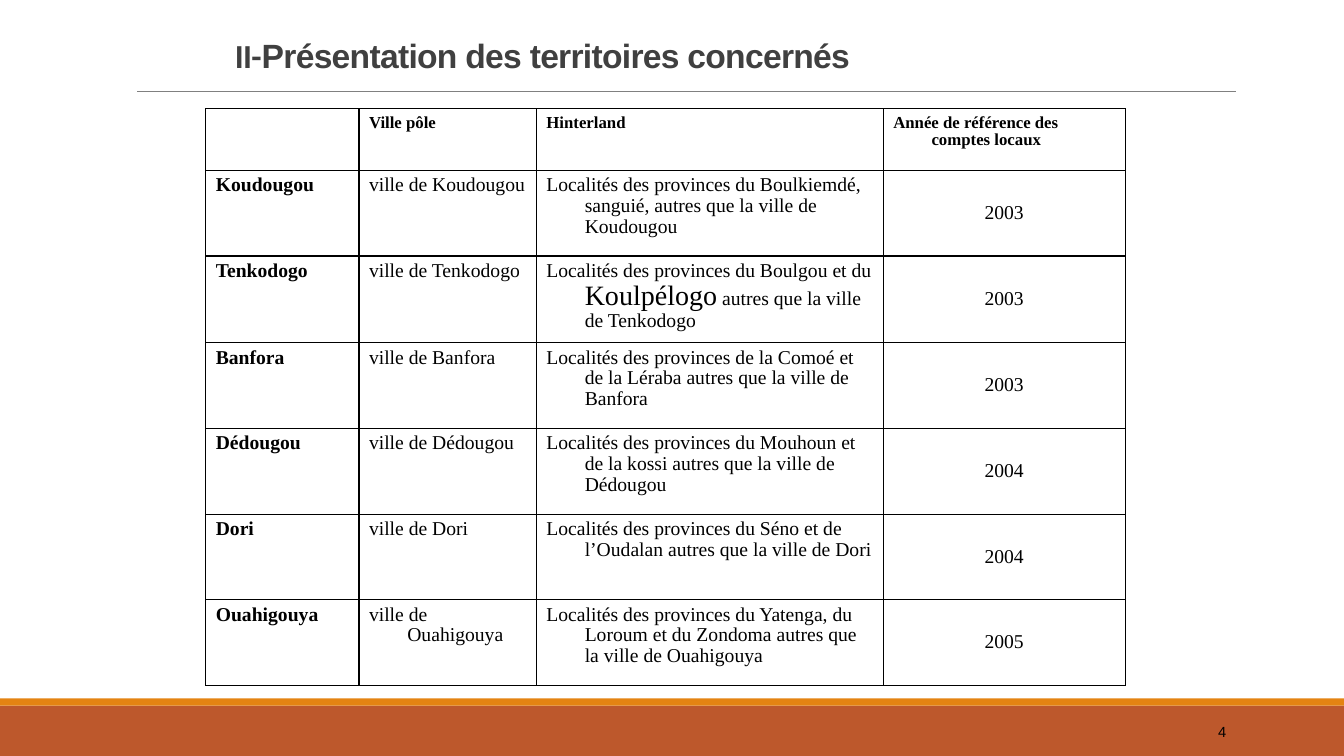
import dataclasses
import pptx
import pptx.dml.color
import pptx.enum.shapes
import pptx.enum.text
import pptx.oxml
import pptx.oxml.ns
import pptx.util

Inches = pptx.util.Inches
Pt = pptx.util.Pt
ALIGN = pptx.enum.text.PP_ALIGN
ANCHOR = pptx.enum.text.MSO_ANCHOR


@dataclasses.dataclass(frozen=True)
class Theme:
    band: str = "BD582C"
    stripe: str = "E48312"
    rule: str = "808080"
    title: str = "404040"
    ink: str = "000000"
    title_font: str = "Arial"
    prefix_font: str = "Calibri"
    table_font: str = "Times New Roman"
    title_size: float = 24
    header_size: float = 12
    body_size: float = 14
    emphasis_size: float = 20
    number_size: float = 10.5


THEME = Theme()
COLUMNS = [1.52, 1.76, 3.44, 2.4]
HEADER_HEIGHT, ROW_HEIGHT = 0.61, 0.85
HEADERS = ["", "Ville pôle", "Hinterland", "Année de référence des comptes locaux"]
EMPHASIS = "Koulpélogo"
TERRITORIES = [
    ("Koudougou", "du Boulkiemdé, sanguié,", "2003"),
    ("Tenkodogo", "du Boulgou et du Koulpélogo", "2003"),
    ("Banfora", "de la Comoé et de la Léraba", "2003"),
    ("Dédougou", "du Mouhoun et de la kossi", "2004"),
    ("Dori", "du Séno et de l’Oudalan", "2004"),
    ("Ouahigouya", "du Yatenga, du Loroum et du Zondoma", "2005"),
]


def rgb(value):
    return pptx.dml.color.RGBColor.from_string(value)


def style_run(r, font, size, color, bold=False):
    r.font.name = font
    r.font.size = Pt(size)
    r.font.color.rgb = rgb(color)
    r.font.bold = bold


def add_bar(slide, left, top, width, height, color):
    sp = slide.shapes.add_shape(
        pptx.enum.shapes.MSO_SHAPE.RECTANGLE,
        Inches(left), Inches(top), Inches(width), Inches(height))
    sp.shadow.inherit = False
    sp.fill.solid()
    sp.fill.fore_color.rgb = rgb(color)
    sp.line.fill.background()


def add_footer(slide, left, top, width, height, number):
    stripe = 0.07
    add_bar(slide, left, top + stripe, width, height - stripe, THEME.band)
    add_bar(slide, left, top, width, stripe, THEME.stripe)
    sp = slide.shapes.add_textbox(
        Inches(left + 10.83), Inches(top + 0.13), Inches(1.43), Inches(0.4))
    tf = sp.text_frame
    tf.word_wrap = True
    tf.vertical_anchor = ANCHOR.MIDDLE
    tf.text = number
    p = tf.paragraphs[0]
    p.alignment = ALIGN.RIGHT
    style_run(p.runs[0], THEME.title_font, THEME.number_size, THEME.ink)


def add_title(slide, left, top, width, height):
    sp = slide.shapes.title
    sp.left, sp.top, sp.width, sp.height = map(Inches, (left, top, width, height))
    tf = sp.text_frame
    tf.word_wrap = True
    tf.auto_size = pptx.enum.text.MSO_AUTO_SIZE.NONE
    tf.vertical_anchor = ANCHOR.BOTTOM
    tf.margin_left = Inches(0.16)
    p = tf.paragraphs[0]
    p.alignment = ALIGN.LEFT
    p.line_spacing = 0.85
    for text, font in (("II-", THEME.prefix_font),
                       ("Présentation des territoires concernés", THEME.title_font)):
        r = p.add_run()
        r.text = text
        style_run(r, font, THEME.title_size, THEME.title, True)
        r.font._element.set("spc", "-50")


def add_rule(slide, left, top, width):
    line = slide.shapes.add_connector(
        pptx.enum.shapes.MSO_CONNECTOR.STRAIGHT,
        Inches(left), Inches(top), Inches(left + width), Inches(top))
    line.line.color.rgb = rgb(THEME.rule)
    line.line.width = Pt(0.5)
    pptx.oxml.ns.qn("a:effectLst")
    line._element.spPr.append(pptx.oxml.parse_xml(
        f'<a:effectLst {pptx.oxml.ns.nsdecls("a")}/>'))


def set_borders(cell):
    tcPr = cell._tc.get_or_add_tcPr()
    for i, side in enumerate(("lnL", "lnR", "lnT", "lnB")):
        tcPr.insert(i, pptx.oxml.parse_xml(
            f'<a:{side} {pptx.oxml.ns.nsdecls("a")} w="{Pt(1)}"><a:solidFill>'
            f'<a:srgbClr val="{THEME.ink}"/></a:solidFill></a:{side}>'))


def fill_cell(cell, text, size, bold, centred):
    cell.fill.background()
    set_borders(cell)
    if not text:
        return
    cell.vertical_anchor = ANCHOR.MIDDLE if centred else ANCHOR.TOP
    p = cell.text_frame.paragraphs[0]
    p.alignment = ALIGN.CENTER if centred else ALIGN.LEFT
    p.line_spacing = 0.95
    pPr = p._p.get_or_add_pPr()
    pPr.set("marL", str(Inches(0.38)))
    pPr.set("indent", str(Inches(-0.38)))
    for part in filter(None, text.partition(EMPHASIS)):
        r = p.add_run()
        r.text = part
        style_run(r, THEME.table_font,
                  THEME.emphasis_size if part == EMPHASIS else size, THEME.ink, bold)


def add_territories(slide, left, top):
    rows = [HEADERS] + [
        (town, f"ville de {town}",
         f"Localités des provinces {provinces} autres que la ville de {town}", year)
        for town, provinces, year in TERRITORIES]
    height = HEADER_HEIGHT + ROW_HEIGHT * len(TERRITORIES)
    table = slide.shapes.add_table(
        len(rows), len(COLUMNS), Inches(left), Inches(top),
        Inches(sum(COLUMNS)), Inches(height)).table
    table.first_row = table.horz_banding = False
    for column, width in zip(table.columns, COLUMNS):
        column.width = Inches(width)
    for i, values in enumerate(rows):
        header = i == 0
        table.rows[i].height = Inches(HEADER_HEIGHT if header else ROW_HEIGHT)
        size = THEME.header_size if header else THEME.body_size
        for j, text in enumerate(values):
            fill_cell(table.cell(i, j), text, size, header or j == 0,
                      not header and j == len(COLUMNS) - 1)


def main():
    prs = pptx.Presentation()
    prs.slide_width, prs.slide_height = Inches(13.33), Inches(7.5)
    slide = prs.slides.add_slide(prs.slide_layouts[5])
    add_footer(slide, 0, 6.93, 13.33, 0.57, "4")
    add_rule(slide, 1.36, 0.91, 10.9)
    add_title(slide, 2.17, 0.3, 9, 0.5)
    add_territories(slide, 2.04, 1.08)
    prs.save("out.pptx")


if __name__ == "__main__":
    main()
